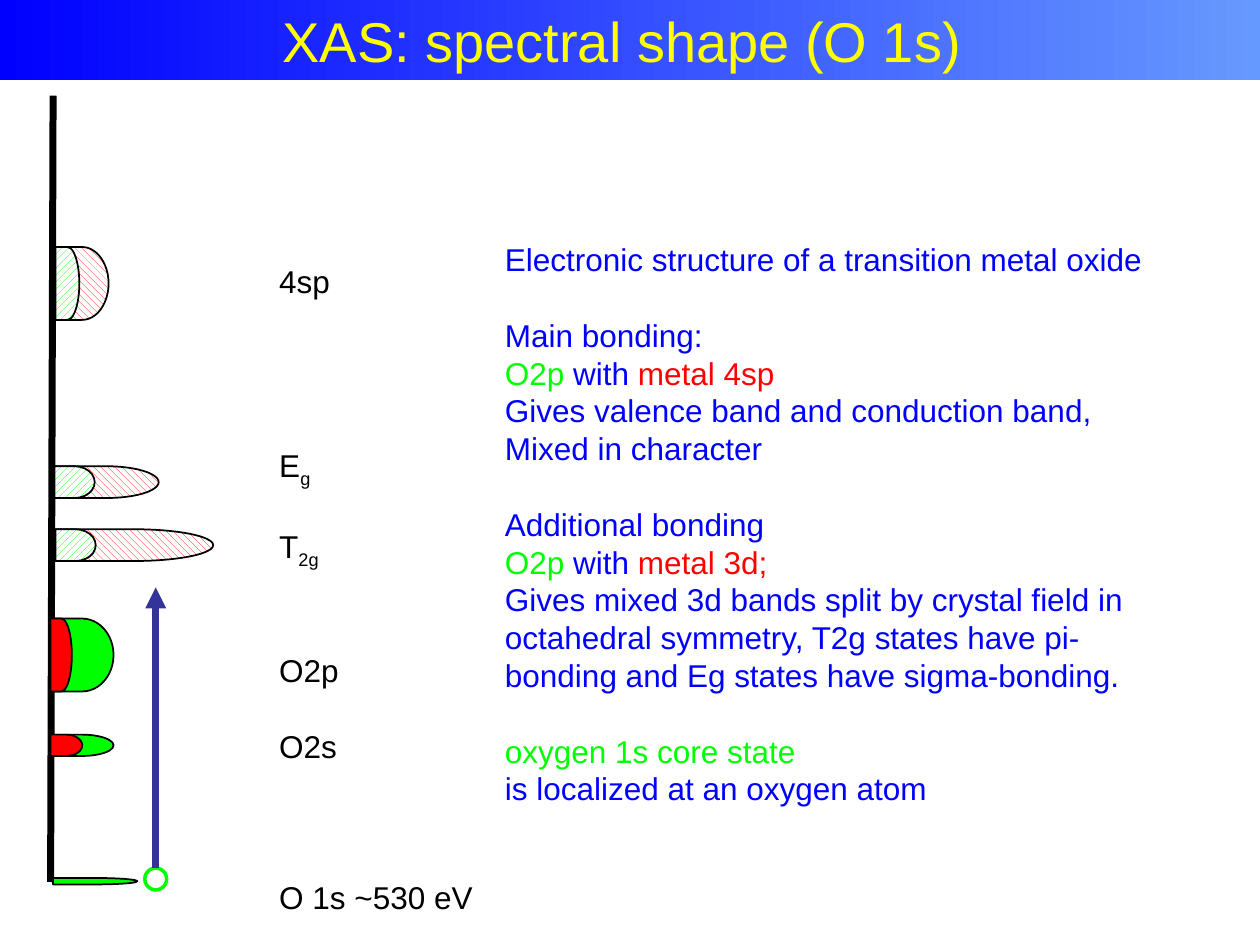
"""Builds a slide on the spectral shape of oxygen 1s X-ray absorption."""
from dataclasses import dataclass
from typing import Any, Optional

from lxml.etree import SubElement
from pptx import Presentation
from pptx.dml.color import RGBColor
from pptx.enum.dml import MSO_PATTERN as Pattern
from pptx.enum.shapes import MSO_CONNECTOR as Connector, MSO_SHAPE as Shape
from pptx.enum.text import MSO_ANCHOR as Anchor, MSO_AUTO_SIZE as AutoSize, PP_ALIGN as Align
from pptx.oxml.ns import qn
from pptx.util import Cm, Pt

BLACK = RGBColor(0x00, 0x00, 0x00)
WHITE = RGBColor(0xFF, 0xFF, 0xFF)
RED = RGBColor(0xFF, 0x00, 0x00)
GREEN = RGBColor(0x00, 0xFF, 0x00)
BLUE = RGBColor(0x00, 0x00, 0xFF)
LIGHT_BLUE = RGBColor(0x66, 0x99, 0xFF)
INDIGO = RGBColor(0x33, 0x33, 0x99)
YELLOW = RGBColor(0xFF, 0xFF, 0x00)
HATCHES = {RED: Pattern.WIDE_DOWNWARD_DIAGONAL, GREEN: Pattern.WIDE_UPWARD_DIAGONAL}
LINE_PITCH = 21.6


@dataclass(frozen=True)
class Band:
    width: float
    color: RGBColor


@dataclass(frozen=True)
class Level:
    left: float
    top: float
    height: float
    bands: tuple[Band, ...]
    empty: bool = False


@dataclass(frozen=True)
class Span:
    text: str
    color: RGBColor = BLUE
    subscript: bool = False


@dataclass(frozen=True)
class Line:
    spans: tuple[Span, ...]
    blank_lines: int = 0
    extra_points: float = 0


LEVELS = (
    Level(1.12, 4.98, 1.47, (Band(1.07, RED), Band(0.48, GREEN)), empty=True),
    Level(1.1, 9.4, 0.64, (Band(2.1, RED), Band(0.81, GREEN)), empty=True),
    Level(1.12, 10.67, 0.64, (Band(3.18, RED), Band(0.81, GREEN)), empty=True),
    Level(1.02, 12.47, 1.47, (Band(1.27, GREEN), Band(0.43, RED))),
    Level(1.02, 14.81, 0.43, (Band(1.27, GREEN), Band(0.64, RED))),
    Level(1.07, 17.7, 0.13, (Band(1.7, GREEN),)),
)
LEVEL_NAMES = (
    Line((Span("4sp", BLACK),)),
    Line((Span("E", BLACK), Span("g", BLACK, True)), 4),
    Line((Span("T", BLACK), Span("2g", BLACK, True)), 1, 3.2),
    Line((Span("O2p", BLACK),), 2, 3.2),
    Line((Span("O2s", BLACK),), 1),
    Line((Span("O 1s ~530 eV", BLACK),), 3),
)
EXPLANATION = (
    Line((Span("Electronic structure of a transition metal oxide"),)),
    Line((Span("Main bonding:"),), 1),
    Line((Span("O2p", GREEN), Span(" with "), Span("metal 4sp", RED))),
    Line((Span("Gives valence band and conduction band,"),)),
    Line((Span("Mixed in character"),)),
    Line((Span("Additional bonding"),), 1),
    Line((Span("O2p", GREEN), Span(" with "), Span("metal 3d;", RED))),
    Line((Span("Gives mixed 3d bands split by crystal field in octahedral symmetry, "
               "T2g states have pi-bonding and Eg states have sigma-bonding."),)),
    Line((Span("oxygen 1s core state", GREEN),), 1),
    Line((Span("is localized at an oxygen atom"),)),
)


def apply_format(target: Any, values: dict[str, Any]) -> None:
    for name, value in values.items():
        setattr(target, name, value)


def add_outlined(slide: Any, kind: Shape, box: tuple[float, ...], color: RGBColor, points: float) -> Any:
    outlined = slide.shapes.add_shape(kind, *map(Cm, box))
    outlined.shadow.inherit = False
    outlined.line.color.rgb = color
    outlined.line.width = Pt(points)
    return outlined


def add_level(slide: Any, level: Level) -> None:
    for band in level.bands:
        box = (level.left, level.top, band.width, level.height)
        fill = add_outlined(slide, Shape.FLOWCHART_DELAY, box, BLACK, 1).fill
        if level.empty:
            fill.patterned()
            fill.pattern = HATCHES[band.color]
            fill.fore_color.rgb = band.color
            fill.back_color.rgb = WHITE
        else:
            fill.solid()
            fill.fore_color.rgb = band.color


def add_straight(slide: Any, ends: tuple[float, ...], color: RGBColor, source: Optional[Any] = None) -> None:
    straight = slide.shapes.add_connector(Connector.STRAIGHT, *map(Cm, ends))
    straight.line.color.rgb = color
    straight.line.width = Pt(4)
    if source is not None:
        straight.begin_connect(source, 0)
        SubElement(straight.line._get_or_add_ln(), qn("a:tailEnd"), type="triangle")
    SubElement(straight._element.spPr, qn("a:effectLst"))


def add_lines(slide: Any, box: tuple[float, ...], lines: tuple[Line, ...], wrap: bool) -> None:
    frame = slide.shapes.add_textbox(*map(Cm, box)).text_frame
    apply_format(frame, {"word_wrap": wrap, "auto_size": AutoSize.SHAPE_TO_FIT_TEXT})
    for index, line in enumerate(lines):
        paragraph = frame.add_paragraph() if index else frame.paragraphs[0]
        gap = Pt(line.blank_lines * LINE_PITCH + line.extra_points)
        apply_format(paragraph, {"line_spacing": Pt(LINE_PITCH), "space_before": gap})
        for span in line.spans:
            run = paragraph.add_run()
            run.text = span.text
            apply_format(run.font, {"name": "Arial", "size": Pt(18)})
            run.font.color.rgb = span.color
            if span.subscript:
                run._r.get_or_add_rPr().set("baseline", "-25000")


def format_title(title: Any) -> None:
    apply_format(title, {"left": 0, "top": 0, "width": Cm(25.4), "height": Cm(1.62)})
    title.fill.gradient()
    title.fill.gradient_angle = 0
    for stop, color in zip(title.fill.gradient_stops, (BLUE, LIGHT_BLUE)):
        stop.color.rgb = color
    frame = title.text_frame
    frame.text = "XAS: spectral shape (O 1s) "
    apply_format(frame, {"vertical_anchor": Anchor.MIDDLE, "auto_size": AutoSize.NONE})
    heading = frame.paragraphs[0]
    heading.alignment = Align.CENTER
    font = heading.runs[0].font
    apply_format(font, {"name": "Arial", "size": Pt(32)})
    font.color.rgb = YELLOW


def main() -> None:
    deck = Presentation()
    apply_format(deck, {"slide_width": Cm(25.4), "slide_height": Cm(19.05)})
    slide = deck.slides.add_slide(deck.slide_layouts[5])
    format_title(slide.shapes.title)
    add_straight(slide, (1.07, 1.93, 1.02, 17.78), BLACK)
    for level in LEVELS:
        add_level(slide, level)
    core_hole = add_outlined(slide, Shape.OVAL, (2.92, 17.5, 0.44, 0.44), GREEN, 2)
    core_hole.fill.background()
    add_straight(slide, (3.14, 17.5, 3.14, 11.84), INDIGO, core_hole)
    add_lines(slide, (5.38, 5.16, 4.45, 13.34), LEVEL_NAMES, False)
    add_lines(slide, (9.93, 4.72, 13.87, 14.1), EXPLANATION, True)
    deck.save("out.pptx")


if __name__ == "__main__":
    main()
